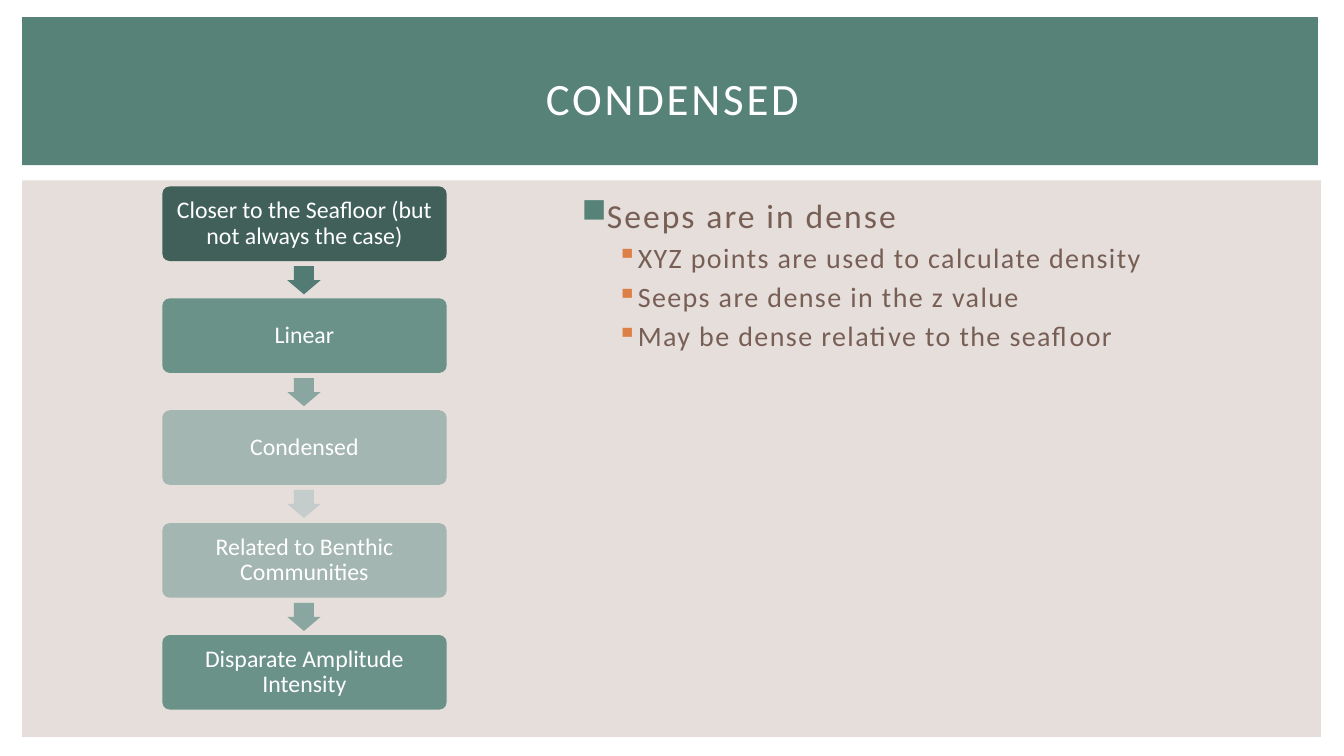
from dataclasses import dataclass

from lxml import etree
from pptx import Presentation
from pptx.dml.color import RGBColor
from pptx.enum.shapes import MSO_SHAPE
from pptx.enum.text import MSO_ANCHOR, PP_ALIGN
from pptx.oxml.ns import qn
from pptx.util import Emu, Pt

RECT = MSO_SHAPE.RECTANGLE
ROUNDED = MSO_SHAPE.ROUNDED_RECTANGLE
DOWN_ARROW = MSO_SHAPE.DOWN_ARROW
TOP, MIDDLE = MSO_ANCHOR.TOP, MSO_ANCHOR.MIDDLE
LEFT, CENTER = PP_ALIGN.LEFT, PP_ALIGN.CENTER

PX = 9144  # EMU per px, 100 px to the inch


@dataclass(frozen=True)
class Theme:
    font: str = "Calibri"
    panel: str = "E6DEDB"
    accent: str = "568278"
    orange: str = "DD8047"
    white: str = "FFFFFF"
    body: str = "775F55"
    title_size: int = 32
    lead_size: int = 24
    point_size: int = 20
    step_size: int = 17


THEME = Theme()

# Step text, box fill, fill of the arrow below it
STEPS = [
    ("Closer to the Seafloor (but not always the case)", "406059", "527C73"),
    ("Linear", "6B9289", "89A7A0"),
    ("Condensed", "A4B6B1", "C4CDCB"),
    ("Related to Benthic Communities", "A4B6B1", "89A7A0"),
    ("Disparate Amplitude Intensity", "6B9289", None),
]
POINTS = [
    "XYZ points are used to calculate density",
    "Seeps are dense in the z value",
    "May be dense relative to the seafloor",
]


def px(*lengths):
    return [Emu(n * PX) for n in lengths]


def add_block(slide, kind, box, fill, adjustments=()):
    sp = slide.shapes.add_shape(kind, *px(*box))
    sp.shadow.inherit = False
    sp.fill.solid()
    sp.fill.fore_color.rgb = RGBColor.from_string(fill)
    sp.line.fill.background()
    for i, value in enumerate(adjustments):
        sp.adjustments[i] = value
    return sp


def prepare_frame(sp, anchor=TOP, inset_x=10, inset_y=5):
    tf = sp.text_frame
    tf.word_wrap = True
    tf.vertical_anchor = anchor
    tf.margin_left, tf.margin_right = px(inset_x, inset_x)
    tf.margin_top, tf.margin_bottom = px(inset_y, inset_y)
    return tf


def write(p, text, size, color=THEME.white, align=LEFT, spacing=0, line=None, before=0):
    p.alignment = align
    p.space_before = Pt(before)
    if line:
        p.line_spacing = line
    r = p.add_run()
    r.text = text
    r.font.name = THEME.font
    r.font.size = Pt(size)
    r.font.color.rgb = RGBColor.from_string(color)
    if spacing:
        r.font._element.set("spc", str(int(spacing * 100)))


def add_bullet(p, char, color, indent, hang):
    pPr = p._p.get_or_add_pPr()
    pPr.set("marL", str(indent * PX))
    pPr.set("indent", str(-hang * PX))
    bu_color = etree.SubElement(pPr, qn("a:buClr"))
    etree.SubElement(bu_color, qn("a:srgbClr")).set("val", color)
    etree.SubElement(pPr, qn("a:buChar")).set("char", char)


def add_title(slide, text):
    tf = prepare_frame(slide.shapes.add_textbox(*px(56, 39, 1222, 115)), MIDDLE)
    write(tf.paragraphs[0], text, THEME.title_size, align=CENTER, spacing=2)


def add_body(slide, lead, points):
    tf = prepare_frame(slide.shapes.add_textbox(*px(562, 188, 720, 482)))
    p = tf.paragraphs[0]
    write(p, lead, THEME.lead_size, THEME.body, spacing=1.5, before=5)
    add_bullet(p, "■", THEME.accent, indent=30, hang=25)
    for point in points:
        p = tf.add_paragraph()
        p.level = 1
        write(p, point, THEME.point_size, THEME.body, spacing=1, before=4)
        add_bullet(p, "▪", THEME.orange, indent=60, hang=20)


def add_flow(slide, steps):
    left, first_top, last_top, width, height = 161, 185, 630, 282, 74
    arrow_width, arrow_height, arrow_gap = 33, 28, 5
    arrow_left = left + (width - arrow_width) // 2
    for i, (text, fill, arrow_fill) in enumerate(steps):
        top = first_top + round((last_top - first_top) * i / (len(steps) - 1))
        sp = add_block(slide, ROUNDED, (left, top, width, height), fill, (0.1,))
        tf = prepare_frame(sp, MIDDLE, 9, 9)
        write(tf.paragraphs[0], text, THEME.step_size, align=CENTER, line=0.9)
        if arrow_fill:
            box = (arrow_left, top + height + arrow_gap, arrow_width, arrow_height)
            add_block(slide, DOWN_ARROW, box, arrow_fill, (0.6, 0.5))


def main():
    prs = Presentation()
    prs.slide_width, prs.slide_height = px(1333, 750)
    slide = prs.slides.add_slide(prs.slide_layouts[6])

    # Background panel and title band
    add_block(slide, RECT, (22, 179, 1288, 552), THEME.panel)
    add_block(slide, RECT, (22, 17, 1285, 147), THEME.accent)

    # Text
    add_body(slide, "Seeps are in dense", POINTS)
    add_title(slide, "CONDENSED")

    # Criteria flow
    add_flow(slide, STEPS)

    prs.save("out.pptx")


if __name__ == "__main__":
    main()
